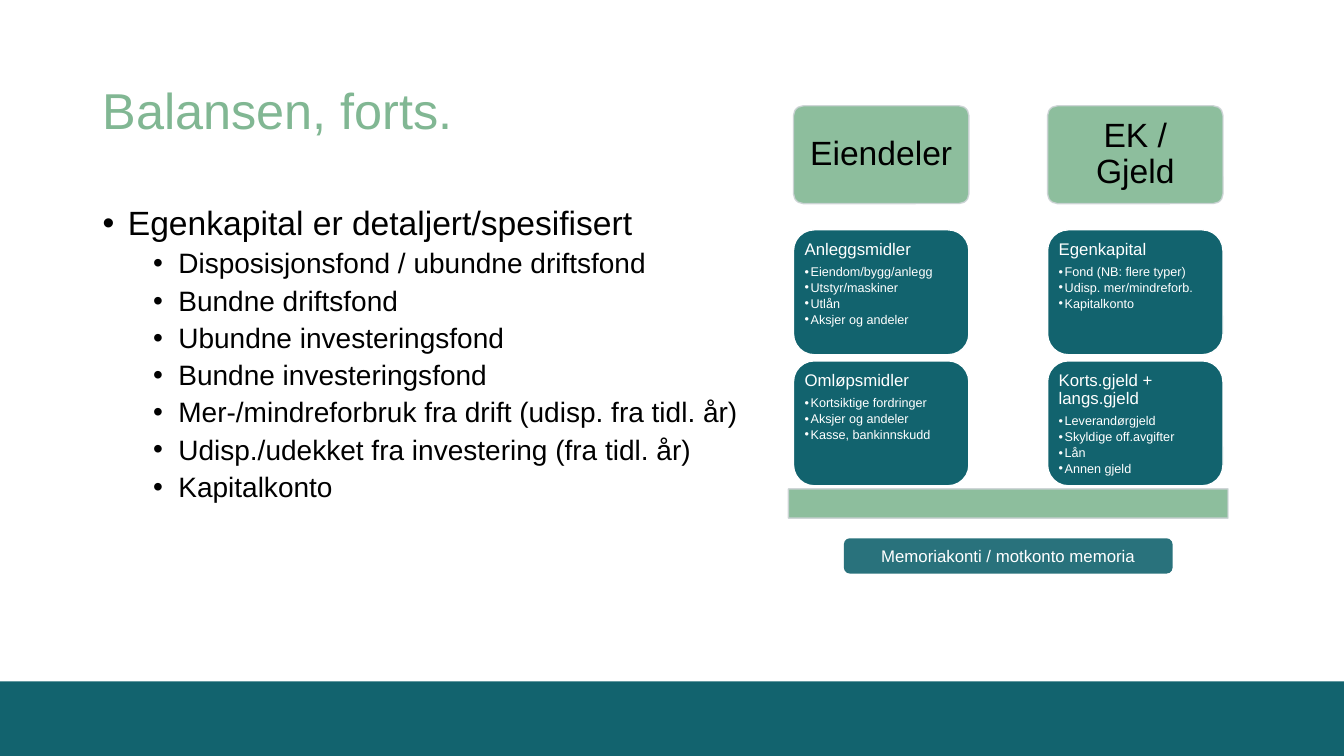
from lxml import etree
from pptx import Presentation
from pptx.dml.color import RGBColor
from pptx.enum.shapes import MSO_SHAPE
from pptx.enum.text import MSO_ANCHOR, PP_ALIGN
from pptx.oxml.ns import qn
from pptx.util import Inches, Pt

RECTANGLE, ROUNDED = MSO_SHAPE.RECTANGLE, MSO_SHAPE.ROUNDED_RECTANGLE
TOP, MIDDLE = MSO_ANCHOR.TOP, MSO_ANCHOR.MIDDLE
LEFT, CENTER = PP_ALIGN.LEFT, PP_ALIGN.CENTER

TITLE = "Balansen, forts."
LEAD = "Egenkapital er detaljert/spesifisert"
FUNDS = [
    "Disposisjonsfond / ubundne driftsfond",
    "Bundne driftsfond",
    "Ubundne investeringsfond",
    "Bundne investeringsfond",
    "Mer-/mindreforbruk fra drift (udisp. fra tidl. år)",
    "Udisp./udekket fra investering (fra tidl. år)",
    "Kapitalkonto",
]
BALANCE = {
    "Eiendeler": [
        ("Anleggsmidler", ["Eiendom/bygg/anlegg", "Utstyr/maskiner", "Utlån",
                           "Aksjer og andeler"]),
        ("Omløpsmidler", ["Kortsiktige fordringer", "Aksjer og andeler",
                          "Kasse, bankinnskudd"]),
    ],
    "EK / Gjeld": [
        ("Egenkapital", ["Fond (NB: flere typer)", "Udisp. mer/mindreforb.",
                         "Kapitalkonto"]),
        ("Korts.gjeld + langs.gjeld", ["Leverandørgjeld", "Skyldige off.avgifter",
                                       "Lån", "Annen gjeld"]),
    ],
}
MEMO = "Memoriakonti / motkonto memoria"

COLORS = {"teal": "12636E", "green": "81B793", "edge": "CCD3D5",
          "black": "000000", "white": "FFFFFF"}
FONT = "Arial"
SLIDE_WIDTH, SLIDE_HEIGHT = 13.33, 7.5
FOOTER_HEIGHT = 0.74
TEXT_LEFT = 0.92
COLUMN_LEFT, COLUMN_PITCH, COLUMN_WIDTH = 7.87, 2.52, 1.74
HEADER_TOP, HEADER_HEIGHT = 1.05, 0.97
CARD_TOP, CARD_PITCH, CARD_HEIGHT = 2.28, 1.3, 1.24
BEAM_TOP, BEAM_HEIGHT, BEAM_OVERHANG = 4.85, 0.29, 0.05
MEMO_TOP, MEMO_WIDTH, MEMO_HEIGHT = 5.34, 3.26, 0.35

# Each style: format values for the paragraph and font, with optional bullet indent
STYLES = {
    "title": {"size": 36, "color": "green", "paragraph": {"line_spacing": 0.9}},
    "lead": {"size": 24, "color": "black", "indent": (0.25, 0.25),
             "paragraph": {"line_spacing": 0.9}},
    "fund": {"size": 20, "color": "black", "indent": (0.75, 0.25),
             "paragraph": {"level": 1, "line_spacing": 0.9, "space_before": Pt(5)}},
    "header": {"size": 24, "color": "black",
               "paragraph": {"line_spacing": 0.9, "alignment": CENTER}},
    "card": {"size": 12, "color": "white",
             "paragraph": {"line_spacing": 0.9, "alignment": LEFT,
                           "space_after": Pt(4.8)}},
    "item": {"size": 9, "color": "white", "indent": (0.06, 0.06),
             "paragraph": {"level": 1, "line_spacing": 0.9, "alignment": LEFT,
                           "space_after": Pt(1.6)}},
    "memo": {"size": 12, "color": "white", "paragraph": {"alignment": CENTER}},
}


def rgb(name):
    return RGBColor.from_string(COLORS[name])


def set_opacity(fill_parent, percent):
    color = fill_parent.find(qn("a:solidFill")).find(qn("a:srgbClr"))
    etree.SubElement(color, qn("a:alpha"), val=str(percent * 1000))


def write(shape, lines, anchor=TOP, insets=(0.1, 0.05)):
    """Fill a shape with (text, style name) lines."""
    frame = shape.text_frame
    across, down = map(Inches, insets)
    settings = {"word_wrap": True, "vertical_anchor": anchor,
                "margin_left": across, "margin_right": across,
                "margin_top": down, "margin_bottom": down}
    for name, value in settings.items():
        setattr(frame, name, value)
    for index, (text, style_name) in enumerate(lines):
        style = STYLES[style_name]
        paragraph = frame.add_paragraph() if index else frame.paragraphs[0]
        for name, value in style["paragraph"].items():
            setattr(paragraph, name, value)
        if "indent" in style:
            margin, hanging = style["indent"]
            properties = paragraph._p.get_or_add_pPr()
            properties.set("marL", str(Inches(margin)))
            properties.set("indent", str(-Inches(hanging)))
            etree.SubElement(properties, qn("a:buFont"), typeface=FONT)
            etree.SubElement(properties, qn("a:buChar"), char="•")
        run = paragraph.add_run()
        run.text = text
        run.font.name = FONT
        run.font.size = Pt(style["size"])
        run.font.color.rgb = rgb(style["color"])


def add_text(slide, box, lines, anchor=TOP):
    write(slide.shapes.add_textbox(*map(Inches, box)), lines, anchor)


def add_block(slide, kind, box, fill, line=None, opacity=100):
    shape = slide.shapes.add_shape(kind, *map(Inches, box))
    shape.shadow.inherit = False
    shape.fill.solid()
    shape.fill.fore_color.rgb = rgb(fill)
    if line:
        shape.line.color.rgb = rgb(line)
        shape.line.width = Pt(1)
    else:
        shape.line.fill.background()
    if opacity < 100:
        properties = shape._element.spPr
        set_opacity(properties, opacity)
        if line:
            set_opacity(properties.find(qn("a:ln")), opacity)
    return shape


def add_balance(slide):
    for column, (heading, cards) in enumerate(BALANCE.items()):
        left = COLUMN_LEFT + column * COLUMN_PITCH
        header = add_block(slide, ROUNDED, (left, HEADER_TOP, COLUMN_WIDTH, HEADER_HEIGHT),
                           "green", "edge", 90)
        header.adjustments[0] = 0.1
        write(header, [(heading, "header")], MIDDLE, (0.1, 0.1))
        for row, (name, items) in enumerate(cards):
            box = (left, CARD_TOP + row * CARD_PITCH, COLUMN_WIDTH, CARD_HEIGHT)
            card = add_block(slide, ROUNDED, box, "teal", "white")
            lines = [(name, "card")] + [(item, "item") for item in items]
            write(card, lines, TOP, (0.05, 0.05))

    span = COLUMN_PITCH * (len(BALANCE) - 1) + COLUMN_WIDTH
    beam = (COLUMN_LEFT - BEAM_OVERHANG, BEAM_TOP, span + 2 * BEAM_OVERHANG, BEAM_HEIGHT)
    add_block(slide, RECTANGLE, beam, "green", "edge", 90)
    memo_left = COLUMN_LEFT + (span - MEMO_WIDTH) / 2
    memo = add_block(slide, ROUNDED, (memo_left, MEMO_TOP, MEMO_WIDTH, MEMO_HEIGHT),
                     "teal", opacity=90)
    write(memo, [(MEMO, "memo")], MIDDLE)


def main():
    presentation = Presentation()
    presentation.slide_width = Inches(SLIDE_WIDTH)
    presentation.slide_height = Inches(SLIDE_HEIGHT)
    slide = presentation.slides.add_slide(presentation.slide_layouts[6])
    footer = (0, SLIDE_HEIGHT - FOOTER_HEIGHT, SLIDE_WIDTH, FOOTER_HEIGHT)
    add_block(slide, RECTANGLE, footer, "teal")
    add_text(slide, (TEXT_LEFT, 0.4, 11.5, 1.45), [(TITLE, "title")], MIDDLE)
    add_balance(slide)
    add_text(slide, (TEXT_LEFT, 2, 6.51, 4.37),
             [(LEAD, "lead")] + [(fund, "fund") for fund in FUNDS])
    presentation.save("out.pptx")


if __name__ == "__main__":
    main()
